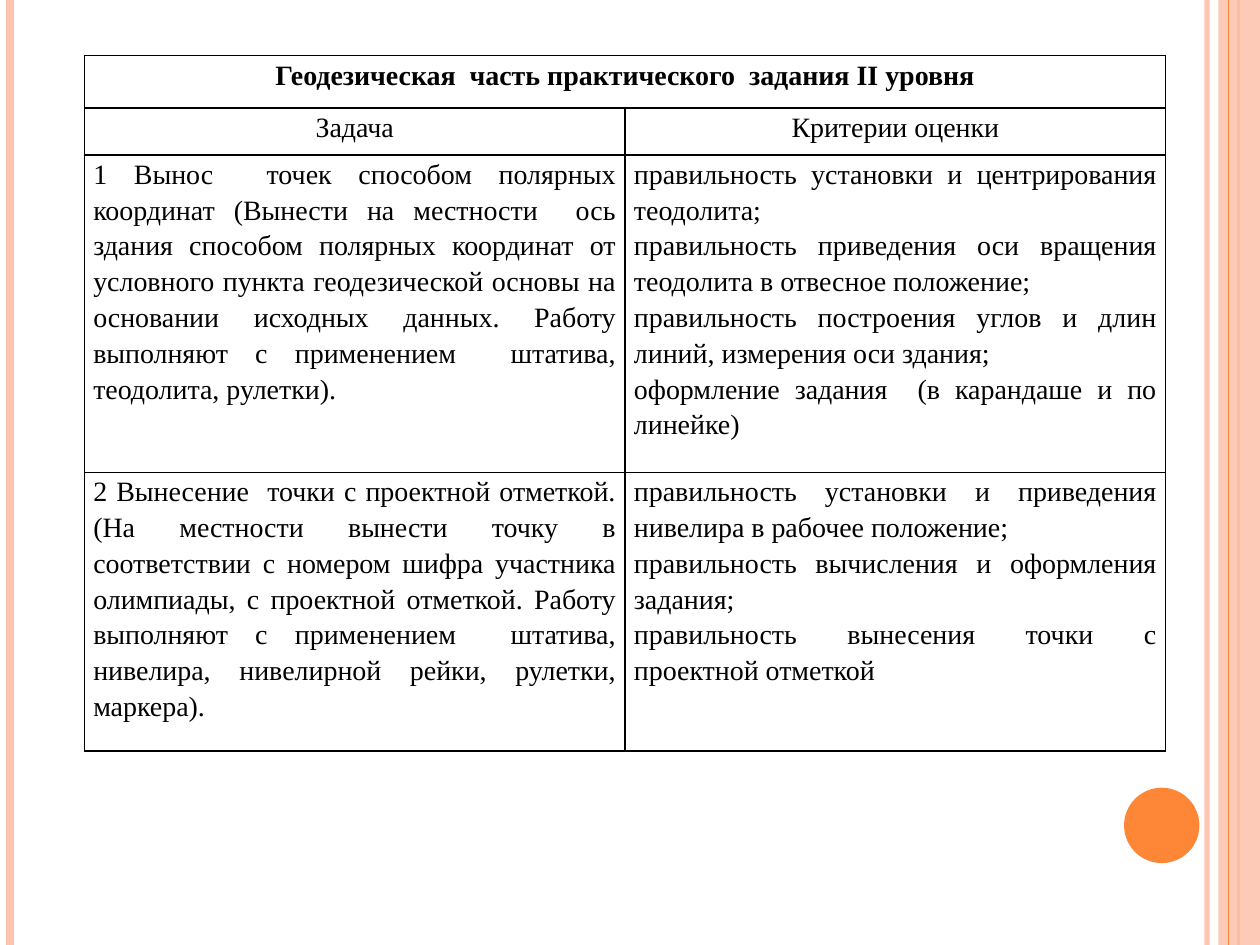
from dataclasses import dataclass

from lxml.etree import SubElement
from pptx import Presentation
from pptx.dml.color import RGBColor
from pptx.enum.shapes import MSO_CONNECTOR, MSO_SHAPE
from pptx.enum.text import PP_ALIGN
from pptx.oxml.ns import qn
from pptx.util import Cm, Pt


@dataclass(frozen=True)
class Theme:
    orange: str = "FE8637"
    peach: str = "FEC3AE"
    ink: str = "000000"
    font: str = "Times New Roman"
    text_size: float = 16
    line_spacing: float = 1.15
    border_width: float = 1
    side_margin: float = 0.18


WIDTH, HEIGHT = 25.4, 19.05

TITLE = "Геодезическая  часть практического  задания II уровня"
HEADINGS = ("Задача", "Критерии оценки")
TASKS = [
    (
        "1 Вынос  точек способом полярных координат (Вынести на местности  ось "
        "здания способом полярных координат от условного пункта геодезической "
        "основы на основании исходных данных. Работу выполняют с применением  "
        "штатива, теодолита, рулетки).",
        [
            "правильность установки и центрирования теодолита;",
            "правильность приведения оси вращения теодолита в отвесное положение;",
            "правильность построения углов и длин линий, измерения оси здания;",
            "оформление задания  (в карандаше и по линейке)",
        ],
    ),
    (
        "2 Вынесение  точки с проектной отметкой. (На местности вынести точку в "
        "соответствии с номером шифра участника олимпиады, с проектной отметкой. "
        "Работу выполняют с применением  штатива, нивелира, нивелирной рейки, "
        "рулетки, маркера).",
        [
            "правильность установки и приведения нивелира в рабочее положение;",
            "правильность вычисления и оформления задания;",
            "правильность вынесения точки с проектной отметкой",
        ],
    ),
]


class SlideBuilder:
    def __init__(self, slide, theme):
        self.slide = slide
        self.theme = theme

    def set_opacity(self, fill, color, percent):
        """Colour a solid fill, translucent when percent is below 100."""
        fill.solid()
        fill.fore_color.rgb = RGBColor.from_string(color)
        if percent < 100:
            tone = fill._xPr.find(qn("a:solidFill"))[0]
            SubElement(tone, qn("a:alpha"), val=str(percent * 1000))

    def stripe(self, x, color, weight, opacity=100):
        """Draw a vertical line over the full slide height."""
        stripe = self.slide.shapes.add_connector(
            MSO_CONNECTOR.STRAIGHT, Cm(x), Cm(0), Cm(x), Cm(HEIGHT))
        stripe.line.width = Pt(weight)
        self.set_opacity(stripe.line.fill, color, opacity)
        SubElement(stripe._element.spPr, qn("a:effectLst"))

    def block(self, preset, left, top, width, height, color, opacity=100):
        block = self.slide.shapes.add_shape(
            preset, Cm(left), Cm(top), Cm(width), Cm(height))
        block.shadow.inherit = False
        self.set_opacity(block.fill, color, opacity)
        block.line.fill.background()

    def table(self, left, top, column_widths, row_heights):
        table = self.slide.shapes.add_table(
            len(row_heights), len(column_widths), Cm(left), Cm(top),
            Cm(sum(column_widths)), Cm(sum(row_heights))).table
        for column, width in zip(table.columns, column_widths):
            column.width = Cm(width)
        for row, height in zip(table.rows, row_heights):
            row.height = Cm(height)
        for cell in table.iter_cells():
            cell.fill.background()
            self.border(cell)
        return table

    def border(self, cell):
        properties = cell._tc.get_or_add_tcPr()
        for position, side in enumerate(("lnL", "lnR", "lnT", "lnB")):
            edge = SubElement(properties, qn(f"a:{side}"),
                              w=str(Pt(self.theme.border_width)))
            fill = SubElement(edge, qn("a:solidFill"))
            SubElement(fill, qn("a:srgbClr"), val=self.theme.ink)
            properties.insert(position, edge)

    def cell_text(self, cell, lines, align, bold=False):
        theme = self.theme
        cell.margin_left = cell.margin_right = Cm(theme.side_margin)
        cell.margin_top = cell.margin_bottom = 0
        cell.text_frame.text = "\n".join(lines)
        for paragraph in cell.text_frame.paragraphs:
            paragraph.alignment = align
            paragraph.line_spacing = theme.line_spacing
            for run in paragraph.runs:
                run.font.name = theme.font
                run.font.size = Pt(theme.text_size)
                run.font.bold = bold
                run.font.color.rgb = RGBColor.from_string(theme.ink)


def main():
    presentation = Presentation()
    presentation.slide_width, presentation.slide_height = Cm(WIDTH), Cm(HEIGHT)
    theme = Theme()
    builder = SlideBuilder(
        presentation.slides.add_slide(presentation.slide_layouts[6]), theme)

    builder.stripe(24.33, theme.peach, 3, opacity=93)
    builder.stripe(0.2, theme.peach, 4.5)
    builder.stripe(24.97, theme.orange, 1.5)
    builder.block(MSO_SHAPE.RECTANGLE, 24.56, 0, 0.84, HEIGHT,
                  theme.peach, opacity=87)
    builder.stripe(24.77, theme.orange, 0.75)
    builder.block(MSO_SHAPE.OVAL, 22.66, 15.88, 1.52, 1.52, theme.orange)

    criteria_table = builder.table(
        1.7, 1.12, [10.9, 10.9], [1.06, 0.94, 6.4, 5.62])
    title_cell = criteria_table.cell(0, 0)
    title_cell.merge(criteria_table.cell(0, 1))
    builder.cell_text(title_cell, [TITLE], PP_ALIGN.CENTER, bold=True)
    for column, heading in enumerate(HEADINGS):
        builder.cell_text(criteria_table.cell(1, column), [heading],
                          PP_ALIGN.CENTER)
    for row, (task, criteria) in enumerate(TASKS, start=2):
        builder.cell_text(criteria_table.cell(row, 0), [task], PP_ALIGN.JUSTIFY)
        builder.cell_text(criteria_table.cell(row, 1), criteria, PP_ALIGN.JUSTIFY)

    presentation.save("out.pptx")


if __name__ == "__main__":
    main()
